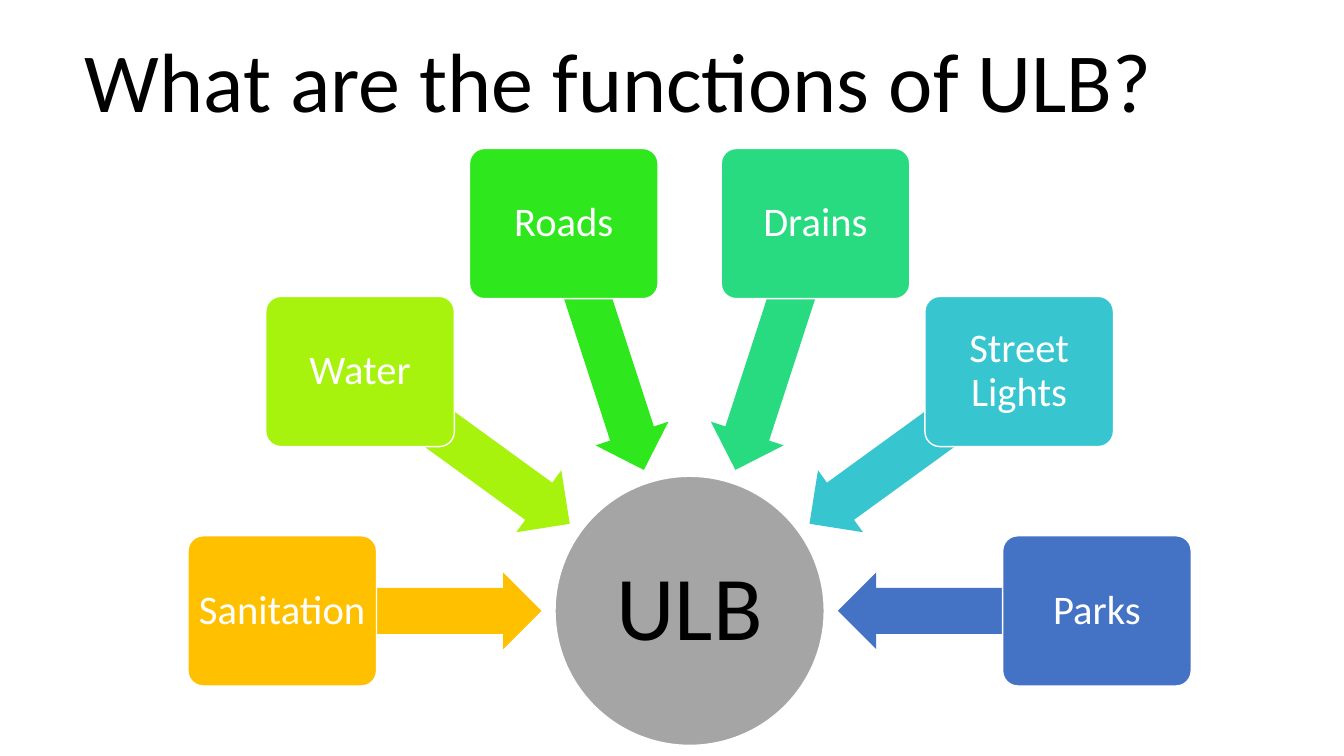
from math import cos, radians, sin

from pptx import Presentation
from pptx.dml.color import RGBColor
from pptx.enum.shapes import MSO_SHAPE
from pptx.enum.text import MSO_ANCHOR, MSO_AUTO_SIZE, PP_ALIGN
from pptx.util import Inches, Pt

ELLIPSE = MSO_SHAPE.OVAL
ROUNDED = MSO_SHAPE.ROUNDED_RECTANGLE
LEFT_ARROW = MSO_SHAPE.LEFT_ARROW
CENTER = PP_ALIGN.CENTER
MIDDLE = MSO_ANCHOR.MIDDLE
BOTTOM = MSO_ANCHOR.BOTTOM
NO_AUTOFIT = MSO_AUTO_SIZE.NONE

BLACK = RGBColor(0x00, 0x00, 0x00)
WHITE = RGBColor(0xFF, 0xFF, 0xFF)
GRAY = RGBColor(0xA5, 0xA5, 0xA5)
AMBER = RGBColor(0xFF, 0xC0, 0x00)
LIME = RGBColor(0xA7, 0xF3, 0x0E)
GREEN = RGBColor(0x2E, 0xE7, 0x1C)
MINT = RGBColor(0x29, 0xDB, 0x80)
TEAL = RGBColor(0x37, 0xC6, 0xCF)
BLUE = RGBColor(0x44, 0x72, 0xC4)

HUB_X, HUB_Y = 6.84, 6.06
HUB_SIZE = (2.67, 2.67)
BOX_SIZE, BOX_RADIUS = (1.87, 1.49), 4.04
ARROW_SIZE, ARROW_RADIUS = (2.56, 0.76), 2.75
START_ANGLE, SWEEP = 180, 180

FUNCTIONS = [
    ("Sanitation", AMBER),
    ("Water", LIME),
    ("Roads", GREEN),
    ("Drains", MINT),
    ("Street Lights", TEAL),
    ("Parks", BLUE),
]


class RadialSlide:
    """Holds the slide, its font and the hub that shapes are placed around."""

    font_name = "Calibri"

    def __init__(self, presentation):
        self.slide = presentation.slides.add_slide(presentation.slide_layouts[5])

    def label(self, shape, text, size, color, anchor=MIDDLE, inset=0.06):
        frame = shape.text_frame
        frame.text = text
        frame_format = {
            "word_wrap": True,
            "auto_size": NO_AUTOFIT,
            "vertical_anchor": anchor,
            "margin_left": Inches(inset),
            "margin_right": Inches(inset),
            "margin_top": Inches(inset),
            "margin_bottom": Inches(inset),
        }
        for name, value in frame_format.items():
            setattr(frame, name, value)
        paragraph = frame.paragraphs[0]
        paragraph.alignment = CENTER
        paragraph.line_spacing = 0.9
        font = paragraph.runs[0].font
        font.name = self.font_name
        font.size = Pt(size)
        font.color.rgb = color

    def title(self, text):
        shape = self.slide.shapes.title
        bounds = {"left": 0.13, "top": 0, "width": 12.01, "height": 1.35}
        for name, value in bounds.items():
            setattr(shape, name, Inches(value))
        self.label(shape, text, 60, BLACK, anchor=BOTTOM, inset=0.05)

    def shape(self, kind, size, color, angle=0, radius=0, outlined=True):
        """Add a shape centred at a polar position around the hub."""
        width, height = size
        left = HUB_X + radius * cos(radians(angle)) - width / 2
        top = HUB_Y + radius * sin(radians(angle)) - height / 2
        shape = self.slide.shapes.add_shape(
            kind, Inches(left), Inches(top), Inches(width), Inches(height))
        shape.shadow.inherit = False
        shape.fill.solid()
        shape.fill.fore_color.rgb = color
        if outlined:
            shape.line.color.rgb = WHITE
            shape.line.width = Pt(1)
        else:
            shape.line.fill.background()
        return shape

    def hub(self, text):
        hub = self.shape(ELLIPSE, HUB_SIZE, GRAY)
        self.label(hub, text, 65, BLACK, inset=0.05)

    def arrow(self, angle, color):
        arrow = self.shape(LEFT_ARROW, ARROW_SIZE, color, angle, ARROW_RADIUS, outlined=False)
        arrow.adjustments[0] = 0.6
        arrow.adjustments[1] = 0.5
        arrow.rotation = angle % 360

    def box(self, text, angle, color):
        box = self.shape(ROUNDED, BOX_SIZE, color, angle, BOX_RADIUS)
        box.adjustments[0] = 0.1
        self.label(box, text, 29, WHITE)


def main():
    presentation = Presentation()
    presentation.slide_width = Inches(13.33)
    presentation.slide_height = Inches(7.5)
    slide = RadialSlide(presentation)
    slide.title("What are the functions of ULB?")
    slide.hub("ULB")
    step = SWEEP / (len(FUNCTIONS) - 1)
    for index, (text, color) in enumerate(FUNCTIONS):
        angle = START_ANGLE + index * step
        slide.arrow(angle, color)
        slide.box(text, angle, color)
    presentation.save("out.pptx")


if __name__ == "__main__":
    main()
